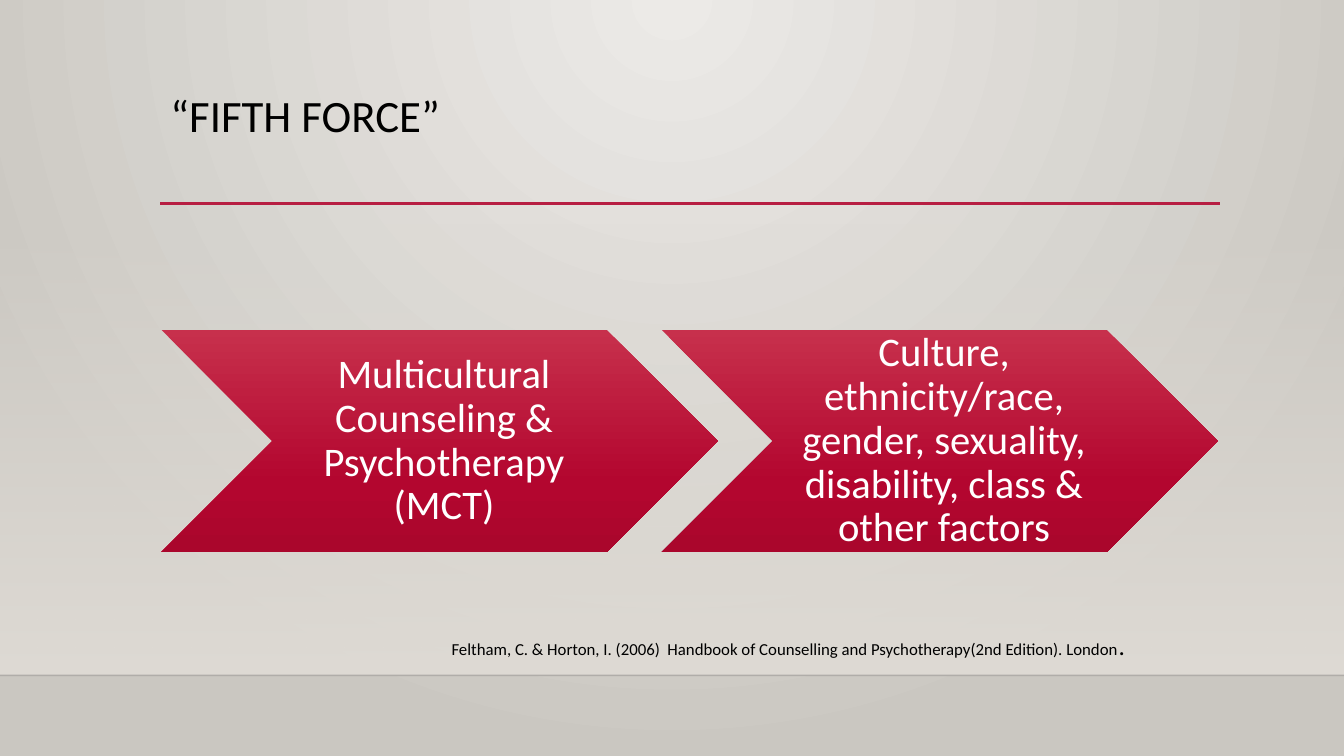
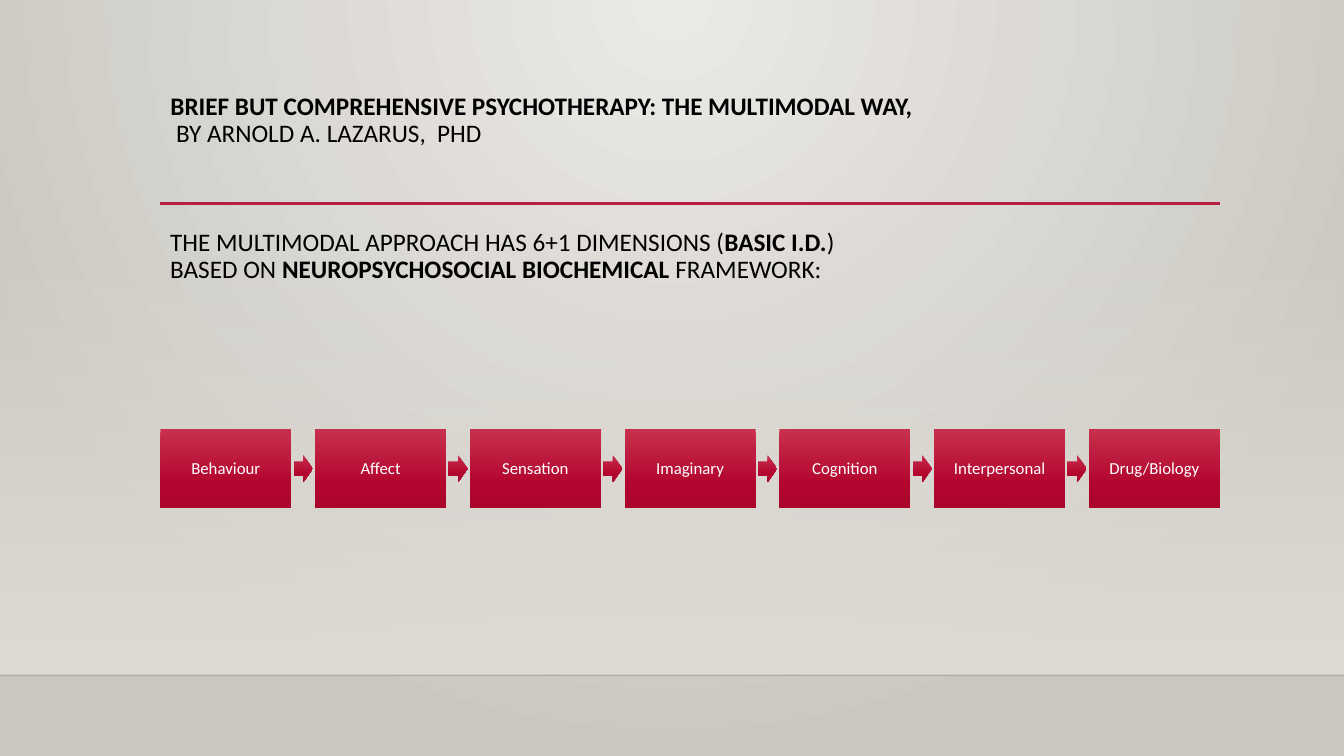
"""Build two slides on multicultural and multimodal psychotherapy."""
from lxml import etree
from pptx import Presentation
from pptx.dml.color import RGBColor
from pptx.enum.shapes import MSO_CONNECTOR, MSO_SHAPE
from pptx.enum.text import MSO_ANCHOR, MSO_AUTO_SIZE, PP_ALIGN
from pptx.oxml.ns import qn
from pptx.util import Inches, Pt

RECTANGLE, CHEVRON, ARROW = MSO_SHAPE.RECTANGLE, MSO_SHAPE.CHEVRON, MSO_SHAPE.RIGHT_ARROW
LEFT, CENTER = PP_ALIGN.LEFT, PP_ALIGN.CENTER
TOP, MIDDLE = MSO_ANCHOR.TOP, MSO_ANCHOR.MIDDLE
STRAIGHT, NO_FIT = MSO_CONNECTOR.STRAIGHT, MSO_AUTO_SIZE.NONE

COLORS = {
    "text": "000000", "white": "FFFFFF", "accent": "B71E42", "floor": "000001",
    "red_light": "C7304C", "red": "B3062F", "red_dark": "AA062C",
    "back_light": "ECEAE7", "back_dark": "CAC7C1", "wall": "DFDBD5",
}
FONT = "Calibri"
SLIDE_WIDTH, SLIDE_HEIGHT = 13.33, 7.5
LEFT_EDGE, RIGHT_EDGE = 1.59, 12.1
FLOOR_TOP, RULE_TOP = 6.7, 2.02
TITLE_BOX = (LEFT_EDGE, 0.88, 10.5, 1.15)
RED_STOPS = [(0, "red_light", 100), (69, "red", 100), (100, "red_dark", 100)]
WALL_STOPS = [(0, "wall", 0), (100, "wall", 100)]
BACK_STOPS = [(0, "back_light", 100), (100, "back_dark", 100)]

FORCE_TITLE = [[("“FIFTH FORCE”", False)]]
FORCES = [
    "Multicultural Counseling & Psychotherapy (MCT)",
    "Culture, ethnicity/race, gender, sexuality, disability, class & other factors",
]
CITATION = [[
    ("Feltham, C. & Horton, I. (2006)  Handbook of Counselling and "
     "Psychotherapy(2nd Edition). London", False),
    (".", False, 18),
]]
MULTIMODAL_TITLE = [
    [("BRIEF BUT COMPREHENSIVE PSYCHOTHERAPY: THE MULTIMODAL WAY,", True)],
    [(" BY ARNOLD A. LAZARUS,  PHD", False)],
]
FRAMEWORK = [
    [("THE MULTIMODAL APPROACH HAS 6+1 DIMENSIONS (", False), ("BASIC I.D.", True), (")", False)],
    [("BASED ON ", False), ("NEUROPSYCHOSOCIAL BIOCHEMICAL ", True), ("FRAMEWORK:", False)],
]
DIMENSIONS = ["Behaviour", "Affect", "Sensation", "Imaginary", "Cognition",
              "Interpersonal", "Drug/Biology"]


def rgb(name):
    return RGBColor.from_string(COLORS[name])


def add_alpha(color_element, percent):
    etree.SubElement(color_element, qn("a:alpha")).set("val", str(percent * 1000))


def set_gradient(properties, stops, radial=False):
    gradient = etree.Element(qn("a:gradFill"), rotWithShape="1")
    stop_list = etree.SubElement(gradient, qn("a:gsLst"))
    for position, color, opacity in stops:
        stop = etree.SubElement(stop_list, qn("a:gs"), pos=str(position * 1000))
        color_element = etree.SubElement(stop, qn("a:srgbClr"), val=COLORS[color])
        if opacity < 100:
            add_alpha(color_element, opacity)
    if radial:
        circle = etree.SubElement(gradient, qn("a:path"), {"path": "circle"})
        etree.SubElement(circle, qn("a:fillToRect"), l="43000", t="0", r="43000", b="100000")
    else:
        etree.SubElement(gradient, qn("a:lin"), ang="5400000", scaled="0")
    properties.replace(properties.find(qn("a:solidFill")), gradient)


def add_gradient_shape(slide, kind, box, stops):
    shape = slide.shapes.add_shape(kind, *map(Inches, box))
    shape.shadow.inherit = False
    shape.line.fill.background()
    shape.fill.solid()
    set_gradient(shape.element.spPr, stops)
    return shape


def add_rule(slide, left, right, top, color, width, opacity=100):
    rule = slide.shapes.add_connector(
        STRAIGHT, Inches(left), Inches(top), Inches(right), Inches(top))
    rule.line.color.rgb = rgb(color)
    rule.line.width = Pt(width)
    properties = rule.element.spPr
    if opacity < 100:
        add_alpha(properties.find(".//" + qn("a:srgbClr")), opacity)
    etree.SubElement(properties, qn("a:effectLst"))
    return rule


def write_text(shape, paragraphs, size, color="text", align=LEFT, anchor=TOP,
               insets=(0.1, 0.05, 0.1, 0.05), spacing=0.9):
    frame = shape.text_frame
    frame.word_wrap = True
    frame.auto_size = NO_FIT
    frame.vertical_anchor = anchor
    (frame.margin_left, frame.margin_top,
     frame.margin_right, frame.margin_bottom) = map(Inches, insets)
    for index, runs in enumerate(paragraphs):
        paragraph = frame.add_paragraph() if index else frame.paragraphs[0]
        paragraph.alignment = align
        paragraph.line_spacing = spacing
        for text, bold, *own_size in runs:
            run = paragraph.add_run()
            run.text = text
            run.font.name = FONT
            run.font.size = Pt(own_size[0] if own_size else size)
            run.font.bold = bold
            run.font.color.rgb = rgb(color)


def add_text(slide, box, paragraphs, size, **text_format):
    write_text(slide.shapes.add_textbox(*map(Inches, box)), paragraphs, size, **text_format)


def add_titled_slide(presentation, layout, title, size):
    slide = presentation.slides.add_slide(layout)
    placeholder = slide.shapes.title
    (placeholder.left, placeholder.top,
     placeholder.width, placeholder.height) = map(Inches, TITLE_BOX)
    write_text(placeholder, title, size)
    return slide


def decorate_layout(layout, slide):
    layout.background.fill.solid()
    set_gradient(layout.element.find(".//" + qn("p:bgPr")), BACK_STOPS, radial=True)
    wall_top = 2.21
    decorations = [
        add_gradient_shape(slide, RECTANGLE,
                           (0, wall_top, SLIDE_WIDTH, FLOOR_TOP - wall_top), WALL_STOPS),
        add_rule(slide, 0, SLIDE_WIDTH, FLOOR_TOP, "floor", 1, opacity=20),
        add_rule(slide, LEFT_EDGE, RIGHT_EDGE, RULE_TOP, "accent", 2.5),
    ]
    for decoration in decorations:
        layout.shapes.element.append(decoration.element)


def add_forces(slide):
    left, top, width, height, pitch = 1.6, 3.27, 5.52, 2.21, 4.96
    for index, force in enumerate(FORCES):
        chevron = add_gradient_shape(
            slide, CHEVRON, (left + index * pitch, top, width, height), RED_STOPS)
        write_text(chevron, [[(force, False)]], 29, color="white", align=CENTER,
                   anchor=MIDDLE, insets=(0.13, 0.04, 0.04, 0.04))


def add_dimensions(slide):
    top, width, height = 4.26, 1.3, 0.78
    arrow_width, arrow_height = 0.19, 0.27
    gap = (RIGHT_EDGE - LEFT_EDGE - len(DIMENSIONS) * width) / (len(DIMENSIONS) - 1)
    for index, dimension in enumerate(DIMENSIONS):
        left = LEFT_EDGE + index * (width + gap)
        if index:
            add_gradient_shape(
                slide, ARROW,
                (left - (gap + arrow_width) / 2, top + (height - arrow_height) / 2,
                 arrow_width, arrow_height), RED_STOPS)
        box = add_gradient_shape(slide, RECTANGLE, (left, top, width, height), RED_STOPS)
        write_text(box, [[(dimension, False)]], 12, color="white", align=CENTER,
                   anchor=MIDDLE, insets=(0.17,) * 4)


def main():
    presentation = Presentation()
    presentation.slide_width = Inches(SLIDE_WIDTH)
    presentation.slide_height = Inches(SLIDE_HEIGHT)
    layout = presentation.slide_layouts[5]

    force_slide = add_titled_slide(presentation, layout, FORCE_TITLE, 32)
    decorate_layout(layout, force_slide)
    add_forces(force_slide)
    add_text(force_slide, (4.38, 6.2, 6.98, 0.4), CITATION, 12, anchor=MIDDLE, spacing=1.0)

    multimodal_slide = add_titled_slide(presentation, layout, MULTIMODAL_TITLE, 18)
    add_text(multimodal_slide, (LEFT_EDGE, 2.23, 10.5, 0.65), FRAMEWORK, 18)
    add_dimensions(multimodal_slide)

    presentation.save("out.pptx")


if __name__ == "__main__":
    main()
